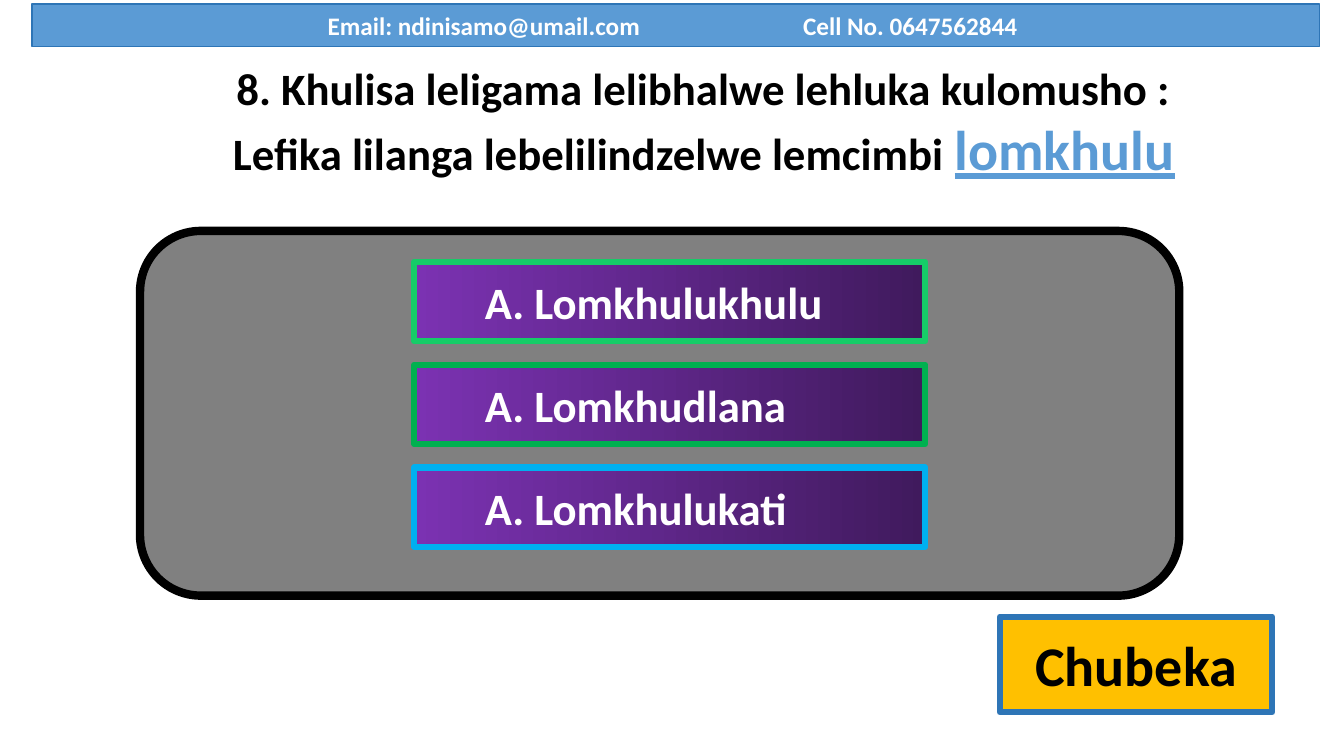
"""Build a siSwati quiz slide with a question, three answers and a next button."""
import pptx
import pptx.dml.color
import pptx.enum.shapes
import pptx.enum.text
import pptx.util
from lxml import etree

Cm = pptx.util.Cm
Pt = pptx.util.Pt
SHAPES = pptx.enum.shapes.MSO_SHAPE
ALIGN = pptx.enum.text.PP_ALIGN
ANCHOR = pptx.enum.text.MSO_ANCHOR


def colour(value):
    return pptx.dml.color.RGBColor.from_string(value)


class QuizSlide:
    font = "Calibri"
    answer_gradient = ("7B32B2", "401A5D")

    def __init__(self, deck):
        self.slide = deck.slides.add_slide(deck.slide_layouts[6])

    def add_lines(self, frame, lines, align=ALIGN.CENTER, inset=0.25):
        frame.word_wrap = True
        frame.margin_left = Cm(inset)
        for number, line in enumerate(lines):
            paragraph = frame.paragraphs[0] if number == 0 else frame.add_paragraph()
            paragraph.alignment = align
            for words, size, ink, underline in line:
                run = paragraph.add_run()
                run.text = words
                run.font.name = self.font
                run.font.size = Pt(size)
                run.font.bold = True
                run.font.underline = underline
                run.font.color.rgb = colour(ink)

    def text(self, box, lines):
        label = self.slide.shapes.add_textbox(*map(Cm, box))
        self.add_lines(label.text_frame, lines)

    def shape(self, kind, box, fill, edge, width):
        block = self.slide.shapes.add_shape(kind, *map(Cm, box))
        block.shadow.inherit = False
        if isinstance(fill, tuple):
            block.fill.gradient()
            block.fill.gradient_angle = 0
            for stop, shade in zip(block.fill.gradient_stops, fill):
                stop.color.rgb = colour(shade)
        else:
            block.fill.solid()
            block.fill.fore_color.rgb = colour(fill)
        block.line.color.rgb = colour(edge)
        block.line.width = Pt(width)
        block.text_frame.vertical_anchor = ANCHOR.MIDDLE
        return block.text_frame

    def answer(self, box, words, edge):
        frame = self.shape(SHAPES.ACTION_BUTTON_CUSTOM, box, self.answer_gradient, edge, 4.5)
        self.add_lines(frame, [[(words, 32, "FFFFFF", False)]], ALIGN.LEFT, 1.78)

    def button(self, box, words):
        frame = self.shape(SHAPES.ACTION_BUTTON_CUSTOM, box, "FFC000", "2E75B6", 4.5)
        self.add_lines(frame, [[(words, 40, "000000", False)]])

    def contact_bar(self, box, words, inset, tab):
        frame = self.shape(SHAPES.RECTANGLE, box, "5B9BD5", "2E75B6", 1)
        self.add_lines(frame, [[(words, 18, "FFFFFF", False)]], ALIGN.LEFT, inset)
        properties = frame.paragraphs[0]._p.get_or_add_pPr()
        namespace = "{http://schemas.openxmlformats.org/drawingml/2006/main}"
        tabs = etree.SubElement(properties, namespace + "tabLst")
        etree.SubElement(tabs, namespace + "tab", pos=str(Cm(tab)), algn="l")


def main():
    deck = pptx.Presentation()
    deck.slide_width = Cm(33.87)
    deck.slide_height = Cm(19.05)
    quiz = QuizSlide(deck)

    quiz.shape(SHAPES.ROUNDED_RECTANGLE, (3.53, 5.82, 26.19, 9.19), "808080", "000000", 6)
    quiz.text((2.9, 1.4, 29.67, 5.56), [
        [("8. Khulisa leligama lelibhalwe lehluka kulomusho :", 32, "000000", False)],
        [("Lefika lilanga lebelilindzelwe lemcimbi ", 32, "000000", False),
         ("lomkhulu", 40, "5B9BD5", True)],
    ])

    answers = [
        ("A. Lomkhulukhulu", "16CC68"),
        ("A. Lomkhudlana", "00B050"),
        ("A. Lomkhulukati", "00B0F0"),
    ]
    for row, (words, edge) in enumerate(answers):
        quiz.answer((10.44, 6.6 + 2.59 * row, 12.88, 2), words, edge)

    quiz.button((25.2, 15.54, 6.86, 2.41), "Chubeka")
    quiz.contact_bar((0.81, 0.1, 32.44, 1.07),
                     "Email: ndinisamo@umail.com\tCell No. 0647562844", 7.45, 11.98)
    deck.save("out.pptx")


if __name__ == "__main__":
    main()
